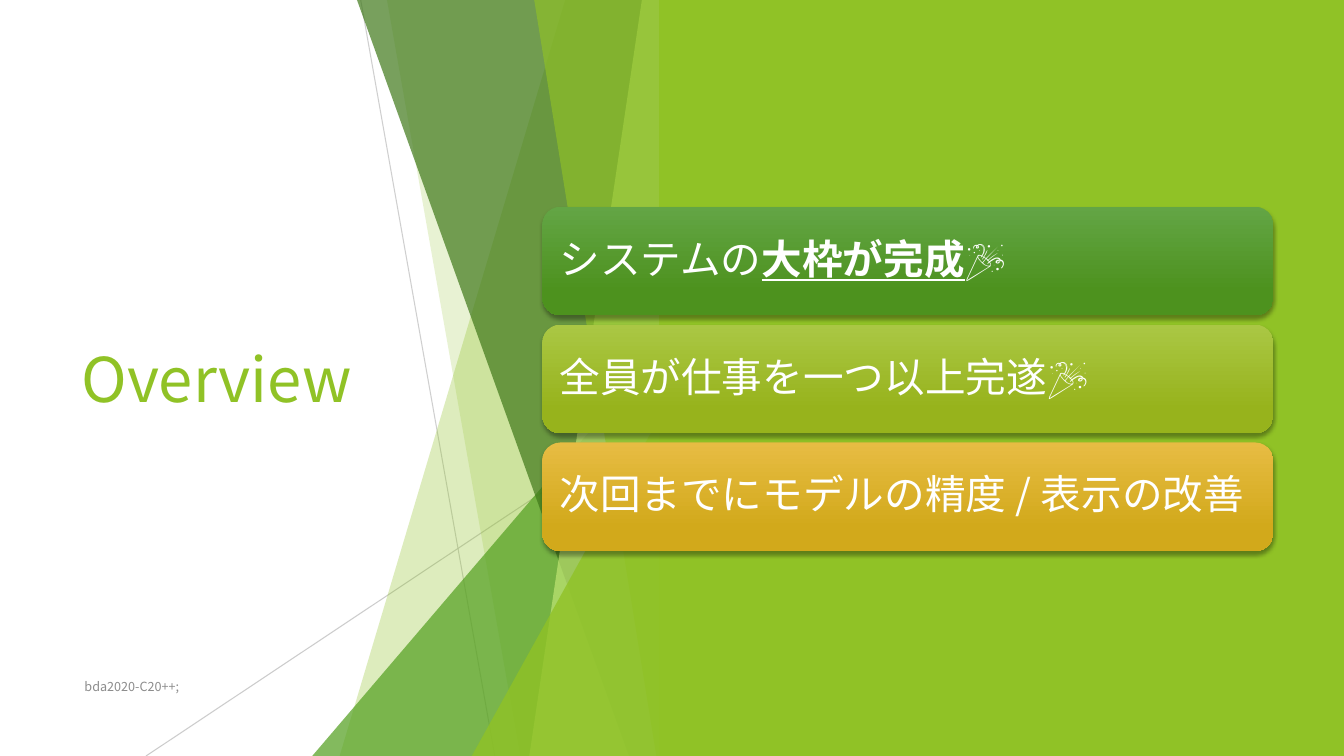
from lxml.etree import SubElement
from pptx import Presentation
from pptx.dml.color import RGBColor
from pptx.enum.shapes import MSO_CONNECTOR as CONN, MSO_SHAPE as SHAPE
from pptx.enum.text import MSO_ANCHOR as ANCHOR
from pptx.oxml.ns import qn
from pptx.util import Cm, Pt

TITLE = "Overview"
FOOTER = "bda2020-C20++;"
CARDS = [
    ([("システムの", False), ("大枠が完成", True), ("🎉", False)], "63A545", "4D921E"),
    ([("全員が仕事を一つ以上完遂🎉", False)], "AAC744", "97B31C"),
    ([("次回までにモデルの精度 / 表示の改善", False)], "E7BC43", "D2A91B"),
]
THEME = {
    "font": "Noto Sans CJK JP",
    "title_size": 44, "card_size": 29, "footer_size": 9,
    "lime": "90C226", "green": "54A021", "forest": "3F7819", "pale": "C0E474",
    "white": "FFFFFF", "gray": "8C8C8C", "rule": "BFBFBF", "shadow": "000000",
}
WIDTH, HEIGHT = 33.87, 19.05
FACET_RIGHT, FACET_TOP = 16.92, -0.02
RULES = [((9.09, 0), (12.47, HEIGHT), 75), ((FACET_RIGHT, 10.24), (3.68, HEIGHT), 80)]
FACETS = [
    ("band", 14.25, 8.56, "lime", 30),
    ("band", 9.75, 13.11, "lime", 20),
    ("corner", 7.87, 8.46, "green", 72),
    ("band", 8.99, 15.85, "forest", 70),
    ("band", 16.18, 13.34, "pale", 70),
    ("band", 13.46, 16.54, "lime", 65),
    ("corner", 11.89, 9.98, "lime", 80),
]
PANEL_LEFT = 16.61
CARD_BOX = (13.67, 5.21, 18.42, 2.74)
CARD_PITCH = 2.97
CARD_INSET = 0.3
TITLE_BOX = (1.8, 3.84, 9.86, 11.38)
FOOTER_BOX = (1.88, 16.79, 17.5, 1.02)


def rgb(name):
    return RGBColor.from_string(THEME.get(name, name))


def set_alpha(element, percent):
    for color in element.iter(qn("a:srgbClr")):
        SubElement(color, qn("a:alpha"), val=str(percent * 1000))


def paint(sp, color, alpha=100):
    sp.shadow.inherit = False
    sp.fill.solid()
    sp.fill.fore_color.rgb = rgb(color)
    sp.line.fill.background()
    if alpha < 100:
        set_alpha(sp._element.spPr, alpha)


def add_rule(s, start, end, alpha):
    line = s.shapes.add_connector(CONN.STRAIGHT, *map(Cm, start + end))
    line.line.color.rgb = rgb("rule")
    line.line.width = Pt(0.75)
    set_alpha(line._element.spPr, alpha)
    SubElement(line._element.spPr, qn("a:effectLst"))


def add_facet(s, kind, x, y, color, alpha):
    if kind == "corner":
        sp = s.shapes.add_shape(SHAPE.ISOSCELES_TRIANGLE, Cm(x), Cm(y),
                                Cm(FACET_RIGHT - x), Cm(HEIGHT - y))
        sp.adjustments[0] = 1
    else:
        outline = [(FACET_RIGHT, FACET_TOP), (FACET_RIGHT, HEIGHT), (y, HEIGHT)]
        builder = s.shapes.build_freeform(Cm(x), Cm(FACET_TOP))
        builder.add_line_segments([(Cm(a), Cm(b)) for a, b in outline], close=True)
        sp = builder.convert_to_shape()
    paint(sp, color, alpha)


def write(sp, runs, size, color):
    tf = sp.text_frame
    tf.word_wrap = True
    tf.vertical_anchor = ANCHOR.MIDDLE
    p = tf.paragraphs[0]
    p.font.name = THEME["font"]
    p.font.size = Pt(THEME[size])
    p.font.color.rgb = rgb(color)
    SubElement(p._p.pPr.find(qn("a:defRPr")), qn("a:ea"), typeface=THEME["font"])
    for text, strong in runs:
        r = p.add_run()
        r.text = text
        if strong:
            r.font.bold = r.font.underline = True
    return tf


def add_label(s, box, text, size, color):
    write(s.shapes.add_textbox(*map(Cm, box)), [(text, False)], size, color)


def add_card(s, index, runs, light, dark):
    left, top, width, height = CARD_BOX
    sp = s.shapes.add_shape(SHAPE.ROUNDED_RECTANGLE, Cm(left),
                            Cm(top + index * CARD_PITCH), Cm(width), Cm(height))
    paint(sp, light)
    sp.fill.gradient()
    sp.fill.gradient_angle = 270
    for stop, color, position in zip(sp.fill.gradient_stops, (light, dark), (0, 0.78)):
        stop.color.rgb = rgb(color)
        stop.position = position
    shadow = SubElement(sp._element.spPr.find(qn("a:effectLst")), qn("a:outerShdw"),
                        blurRad=str(Pt(3)), dist=str(Pt(2)), dir="5400000", rotWithShape="0")
    SubElement(shadow, qn("a:srgbClr"), val=THEME["shadow"])
    set_alpha(shadow, 35)
    tf = write(sp, runs, "card_size", "white")
    tf.margin_left = tf.margin_right = tf.margin_top = tf.margin_bottom = Cm(CARD_INSET)
    tf.paragraphs[0].line_spacing = 0.9
    tf.paragraphs[0].alignment = 1


def main():
    prs = Presentation()
    prs.slide_width, prs.slide_height = Cm(WIDTH), Cm(HEIGHT)
    s = prs.slides.add_slide(prs.slide_layouts[6])
    add_label(s, TITLE_BOX, TITLE, "title_size", "lime")
    for rule in RULES:
        add_rule(s, *rule)
    for facet in FACETS:
        add_facet(s, *facet)
    panel = s.shapes.add_shape(SHAPE.RECTANGLE, Cm(PANEL_LEFT), 0,
                               Cm(WIDTH - PANEL_LEFT), Cm(HEIGHT))
    paint(panel, "lime")
    for index, card in enumerate(CARDS):
        add_card(s, index, *card)
    add_label(s, FOOTER_BOX, FOOTER, "footer_size", "gray")
    prs.save("out.pptx")


if __name__ == "__main__":
    main()
